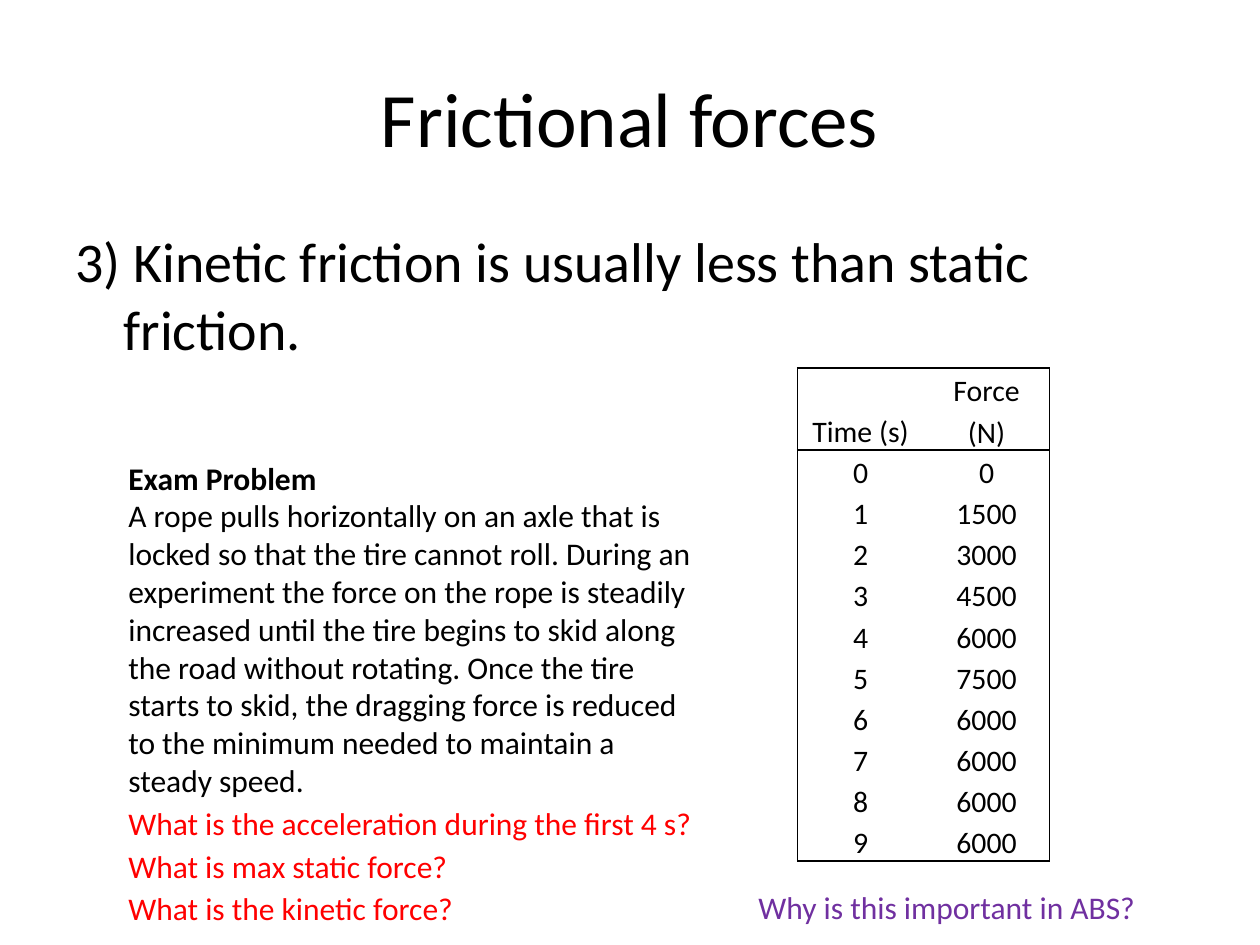
from lxml.etree import SubElement
from pptx import Presentation
from pptx.dml.color import RGBColor
from pptx.enum.text import MSO_ANCHOR, MSO_AUTO_SIZE, PP_ALIGN
from pptx.oxml import parse_xml
from pptx.oxml.ns import nsdecls, qn
from pptx.util import Inches, Pt

BLACK = RGBColor(0x00, 0x00, 0x00)
RED = RGBColor(0xFF, 0x00, 0x00)
PURPLE = RGBColor(0x70, 0x30, 0xA0)
FONT = "Calibri"

TITLE = "Frictional forces"
STATEMENT = "3) Kinetic friction is usually less than static friction."
PROBLEM_HEADING = "Exam Problem"
PROBLEM = (
    "A rope pulls horizontally on an axle that is locked so that the tire "
    "cannot roll. During an experiment the force on the rope is steadily "
    "increased until the tire begins to skid along the road without rotating. "
    "Once the tire starts to skid, the dragging force is reduced to the "
    "minimum needed to maintain a steady speed."
)
QUESTIONS = [
    ("What is the acceleration during the first 4 s?", 4.73),
    ("What is max static force?", 2.76),
    ("What is the kinetic force?", 2.81),
]
ABS_QUESTION = "Why is this important in ABS?"
HEADER = ("Time (s)", "Force (N)")
FORCES = [0, 1500, 3000, 4500, 6000, 7500, 6000, 6000, 6000, 6000]

LEFT = 0.92
QUESTION_TOP, QUESTION_STEP = 6.33, 0.34
HEADER_HEIGHT, ROW_HEIGHT = 0.63, 0.32


def write(paragraph, text, size=18, color=BLACK, bold=False, align=None, spacing=None):
    run = paragraph.add_run()
    run.text = text
    run.font.name = FONT
    run.font.size = Pt(size)
    run.font.bold = bold
    run.font.color.rgb = color
    if align is not None:
        paragraph.alignment = align
    if spacing is not None:
        paragraph.line_spacing = spacing


def place(shape, left, top, width, height):
    shape.left, shape.top = Inches(left), Inches(top)
    shape.width, shape.height = Inches(width), Inches(height)


def add_text_box(slide, left, top, width, height, wrap=False):
    box = slide.shapes.add_textbox(
        Inches(left), Inches(top), Inches(width), Inches(height))
    frame = box.text_frame
    frame.word_wrap = wrap
    frame.auto_size = MSO_AUTO_SIZE.SHAPE_TO_FIT_TEXT
    return frame


def hang_indent(paragraph, inches):
    """Replace the bullet with a plain hanging indent."""
    properties = paragraph._p.get_or_add_pPr()
    properties.set("marL", str(Inches(inches)))
    properties.set("indent", str(-Inches(inches)))
    SubElement(properties, qn("a:buNone"))


def set_borders(cell, visible):
    """Draw the sides named in visible (of L, R, T, B) and clear the others."""
    properties = cell._tc.get_or_add_tcPr()
    for position, side in enumerate("LRTB"):
        if side in visible:
            fill = f'<a:solidFill><a:srgbClr val="{BLACK}"/></a:solidFill>'
        else:
            fill = "<a:noFill/>"
        line = parse_xml(
            f'<a:ln{side} {nsdecls("a")} w="{Pt(1)}">{fill}</a:ln{side}>')
        properties.insert(position, line)


def add_force_table(slide):
    rows = [HEADER] + [(str(time), str(force)) for time, force in enumerate(FORCES)]
    height = HEADER_HEIGHT + ROW_HEIGHT * len(FORCES)
    table = slide.shapes.add_table(
        len(rows), len(HEADER), Inches(6.33), Inches(2.92), Inches(2), Inches(height)).table
    table.first_row = table.horz_banding = False
    for row_index, values in enumerate(rows):
        is_header = row_index == 0
        table.rows[row_index].height = Inches(HEADER_HEIGHT if is_header else ROW_HEIGHT)
        for column_index, value in enumerate(values):
            cell = table.cell(row_index, column_index)
            cell.fill.background()
            cell.vertical_anchor = MSO_ANCHOR.BOTTOM
            cell.margin_left = cell.margin_right = Inches(0.11)
            cell.margin_top = cell.margin_bottom = 0
            write(cell.text_frame.paragraphs[0], value, size=17,
                  align=PP_ALIGN.CENTER, spacing=1.15)
            sides = "LR"[column_index]
            if row_index <= 1:
                sides += "T"
            if is_header or row_index == len(rows) - 1:
                sides += "B"
            set_borders(cell, sides)


def main():
    presentation = Presentation()
    presentation.slide_width, presentation.slide_height = Inches(10), Inches(7.5)
    slide = presentation.slides.add_slide(presentation.slide_layouts[1])

    title, body = slide.placeholders
    place(title, 0.5, 0.3, 9, 1.25)
    title.text_frame.vertical_anchor = MSO_ANCHOR.MIDDLE
    write(title.text_frame.paragraphs[0], TITLE, size=44, align=PP_ALIGN.CENTER)

    place(body, 0.5, 1.75, 9, 4.95)
    statement = body.text_frame.paragraphs[0]
    write(statement, STATEMENT, size=32)
    hang_indent(statement, 0.38)

    problem = add_text_box(slide, LEFT, 3.59, 4.75, 2.83, wrap=True)
    write(problem.paragraphs[0], PROBLEM_HEADING, bold=True)
    write(problem.add_paragraph(), PROBLEM)

    add_force_table(slide)

    for index, (question, width) in enumerate(QUESTIONS):
        frame = add_text_box(
            slide, LEFT, QUESTION_TOP + index * QUESTION_STEP, width, 0.4)
        write(frame.paragraphs[0], question, color=RED)
    frame = add_text_box(slide, 5.92, 7, 3.22, 0.4)
    write(frame.paragraphs[0], ABS_QUESTION, color=PURPLE)

    presentation.save("out.pptx")


if __name__ == "__main__":
    main()
